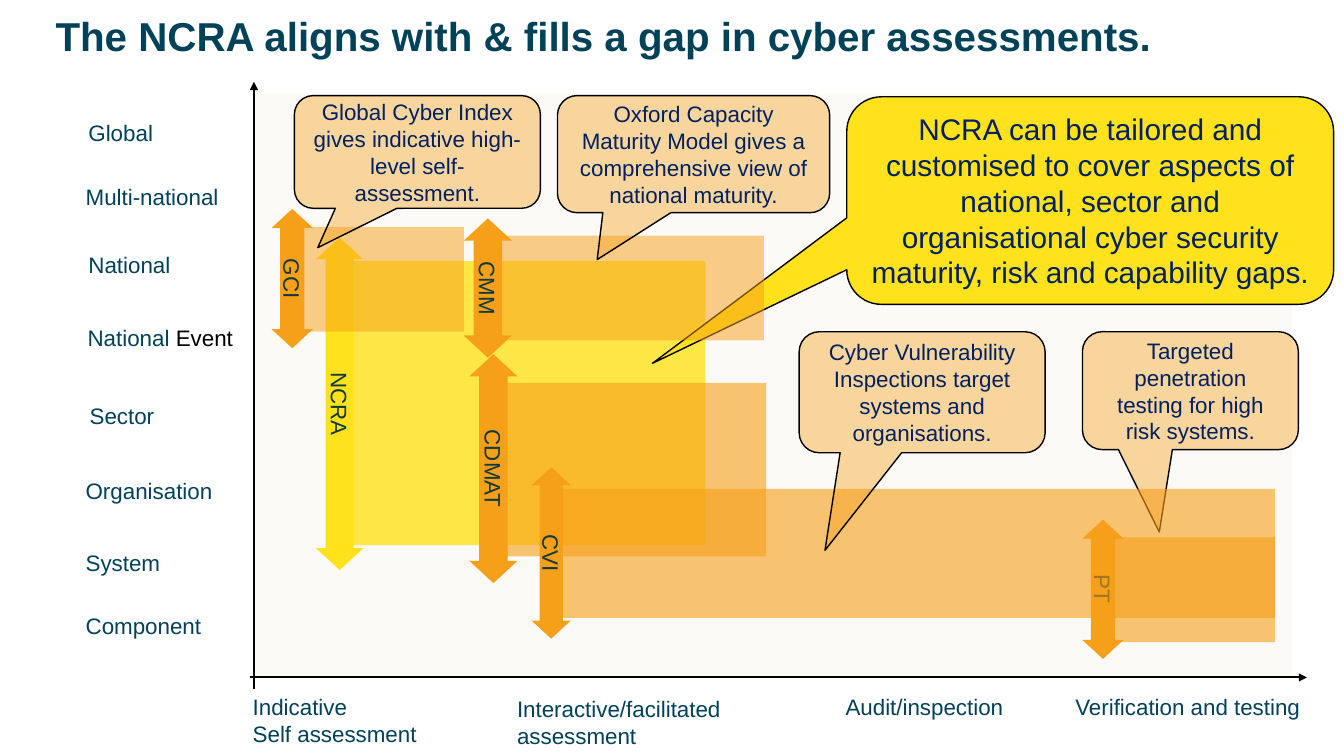
from dataclasses import dataclass

from lxml.etree import SubElement
from pptx import Presentation
from pptx.dml.color import RGBColor
from pptx.enum.shapes import MSO_CONNECTOR, MSO_SHAPE
from pptx.enum.text import MSO_ANCHOR, PP_ALIGN
from pptx.oxml.ns import qn
from pptx.shapes.autoshape import Shape
from pptx.slide import Slide
from pptx.util import Cm, Pt

COLOURS = {
    "heading": "024259",
    "panel": "FAF5EF",
    "ncra": "FFE21B",
    "tool": "F69F19",
    "arrow text": "103A3E",
    "callout text": "002060",
    "black": "000000",
}
FONT = "Arial"
Box = tuple[float, float, float, float]  # left, top, width, height in cm


@dataclass
class Label:
    lines: list[str]
    box: Box
    ending: str = ""  # black text after the last line


@dataclass
class Callout:
    text: str
    box: Box
    tip: tuple[float, float]
    size: float = 16
    colour: str = "tool"
    opacity: int = 40
    insets: tuple[float, float] = (0.33, 0.18)


@dataclass
class Assessment:
    name: str
    coverage: Box
    arrow: Box  # frame before the quarter turn
    opacity: int
    colour: str = "tool"
    callout: Callout | None = None


LABELS = [
    # Levels on the vertical axis
    Label(["Global"], (1.98, 2.87, 2.16, 0.94)),
    Label(["Multi-national"], (1.91, 4.5, 3.89, 0.94)),
    Label(["National"], (1.98, 6.2, 2.59, 0.94)),
    Label(["National"], (1.96, 8.05, 4.22, 0.94), " Event"),
    Label(["Sector"], (2.01, 10.01, 2.16, 0.94)),
    Label(["Organisation"], (1.91, 11.89, 3.73, 0.94)),
    Label(["System"], (1.91, 13.72, 2.41, 0.94)),
    Label(["Component"], (1.91, 15.29, 3.45, 0.94)),
    # Depth of assessment on the horizontal axis
    Label(["Indicative", "Self assessment"], (6.12, 17.35, 4.72, 1.63)),
    Label(["Interactive/facilitated", "assessment"], (12.78, 17.4, 5.72, 1.63)),
    Label(["Audit/inspection"], (21.06, 17.35, 4.52, 0.94)),
    Label(["Verification and testing"], (26.85, 17.35, 6.25, 0.94)),
]

NCRA = Assessment("NCRA", (8.76, 6.58, 9.02, 7.16), (4.37, 9.58, 8.38, 1.19), 80, "ncra")
CAPABILITY = Assessment("CDMAT", (12.45, 9.65, 6.86, 4.37), (9.55, 11.2, 5.77, 1.22), 60)
NCRA_CALLOUT = Callout(
    "NCRA can be tailored and customised to cover aspects of national, sector and "
    "organisational cyber security maturity, risk and capability gaps.",
    (21.34, 2.44, 12.27, 5.23), (-0.899, 0.784), 21.3, "ncra", 100, (0.25, 0.13))
EXPLAINED = [
    Assessment("PT", (27.86, 13.54, 4.27, 2.64), (26.04, 14.33, 3.51, 1.04), 60,
               callout=Callout("Targeted penetration testing for high risk systems.",
                               (27.28, 8.36, 5.44, 2.97), (-0.144, 1.199))),
    Assessment("CVI", (13.89, 12.32, 18.24, 3.25), (11.73, 13.44, 4.32, 0.99), 60,
               callout=Callout("Cyber Vulnerability Inspections target systems and organisations.",
                               (20.14, 8.36, 6.2, 3.05), (-0.395, 1.306))),
    Assessment("GCI", (7.42, 5.72, 4.27, 2.64), (5.61, 6.5, 3.51, 1.04), 50,
               callout=Callout("Global Cyber Index gives indicative high-level self-assessment.",
                               (7.42, 2.41, 6.2, 2.84), (-0.405, 0.849))),
    Assessment("CMM", (12.6, 5.94, 6.65, 2.64), (10.54, 6.65, 3.51, 1.22), 50,
               callout=Callout("Oxford Capacity Maturity Model gives a comprehensive view of "
                               "national maturity.",
                               (14.05, 2.41, 6.86, 2.95), (-0.354, 0.901))),
]


def rgb(colour: str) -> RGBColor:
    return RGBColor.from_string(COLOURS[colour])


def style(paragraph, size: float, colour: str) -> None:
    paragraph.font.name = FONT
    paragraph.font.size = Pt(size)
    paragraph.font.color.rgb = rgb(colour)


def add_filled(slide: Slide, preset: MSO_SHAPE, box: Box, colour: str,
               opacity: int = 100) -> Shape:
    shape = slide.shapes.add_shape(preset, *map(Cm, box))
    shape.shadow.inherit = False
    shape.line.fill.background()
    shape.fill.solid()
    shape.fill.fore_color.rgb = rgb(colour)
    if opacity < 100:
        colour_node = shape._element.spPr.find(qn("a:solidFill"))[0]
        SubElement(colour_node, qn("a:alpha"), val=str(opacity * 1000))
    return shape


def write_centred(shape: Shape, text: str, size: float, colour: str) -> None:
    frame = shape.text_frame
    frame.word_wrap = True
    frame.vertical_anchor = MSO_ANCHOR.MIDDLE
    paragraph = frame.paragraphs[0]
    paragraph.text = text
    paragraph.alignment = PP_ALIGN.CENTER
    style(paragraph, size, colour)


def add_callout(slide: Slide, callout: Callout) -> None:
    bubble = add_filled(slide, MSO_SHAPE.ROUNDED_RECTANGULAR_CALLOUT, callout.box,
                        callout.colour, callout.opacity)
    for index, value in enumerate((*callout.tip, 0.167)):
        bubble.adjustments[index] = value
    bubble.line.color.rgb = rgb("black")
    bubble.line.width = Pt(1)
    frame = bubble.text_frame
    frame.margin_left = frame.margin_right = Cm(callout.insets[0])
    frame.margin_top = frame.margin_bottom = Cm(callout.insets[1])
    write_centred(bubble, callout.text, callout.size, "callout text")


def add_assessment(slide: Slide, assessment: Assessment) -> None:
    add_filled(slide, MSO_SHAPE.RECTANGLE, assessment.coverage, assessment.colour,
               assessment.opacity)
    arrow = add_filled(slide, MSO_SHAPE.LEFT_RIGHT_ARROW, assessment.arrow, assessment.colour)
    arrow.rotation = 90
    arrow.adjustments[0] = 0.59
    arrow.adjustments[1] = 0.461
    write_centred(arrow, assessment.name, 16, "arrow text")
    if assessment.callout:
        add_callout(slide, assessment.callout)


def add_axis(slide: Slide, start: tuple[float, float], end: tuple[float, float]) -> None:
    axis = slide.shapes.add_connector(MSO_CONNECTOR.STRAIGHT, *map(Cm, start + end))
    axis.line.color.rgb = rgb("black")
    axis.line.width = Pt(1.5)
    SubElement(axis.line._get_or_add_ln(), qn("a:tailEnd"), type="triangle")
    SubElement(axis._element.spPr, qn("a:effectLst"))


def add_label(slide: Slide, label: Label) -> None:
    frame = slide.shapes.add_textbox(*map(Cm, label.box)).text_frame
    frame.word_wrap = False
    for index, line in enumerate(label.lines):
        paragraph = frame.add_paragraph() if index else frame.paragraphs[0]
        paragraph.text = line
        style(paragraph, 16, "heading")
    if label.ending:
        ending = paragraph.add_run()
        ending.text = label.ending
        ending.font.color.rgb = rgb("black")


def add_heading(slide: Slide, text: str) -> None:
    heading = slide.shapes.title
    heading.left, heading.top, heading.width, heading.height = map(Cm, (1.4, 0.13, 31.7, 1.68))
    frame = heading.text_frame
    frame.margin_left = frame.margin_right = frame.margin_top = frame.margin_bottom = 0
    frame.vertical_anchor = MSO_ANCHOR.MIDDLE
    paragraph = frame.paragraphs[0]
    paragraph.text = text
    paragraph.alignment = PP_ALIGN.LEFT
    paragraph.line_spacing = 0.9
    style(paragraph, 28.8, "heading")
    paragraph.font.bold = True


def main() -> None:
    deck = Presentation()
    deck.slide_width, deck.slide_height = Cm(33.87), Cm(19.05)
    slide = deck.slides.add_slide(deck.slide_layouts[5])
    add_heading(slide, "The NCRA aligns with & fills a gap in cyber assessments.")

    # Chart area, axes and their labels
    add_filled(slide, MSO_SHAPE.RECTANGLE, (6.43, 2.36, 26.14, 14.71), "panel", 46)
    add_assessment(slide, NCRA)
    add_axis(slide, (6.4, 17.35), (6.4, 2.06))
    add_axis(slide, (6.3, 17.07), (32.94, 17.07))
    for label in LABELS:
        add_label(slide, label)

    # Assessments and callouts, from back to front
    add_assessment(slide, CAPABILITY)
    add_callout(slide, NCRA_CALLOUT)
    for assessment in EXPLAINED:
        add_assessment(slide, assessment)
    deck.save("out.pptx")


if __name__ == "__main__":
    main()
